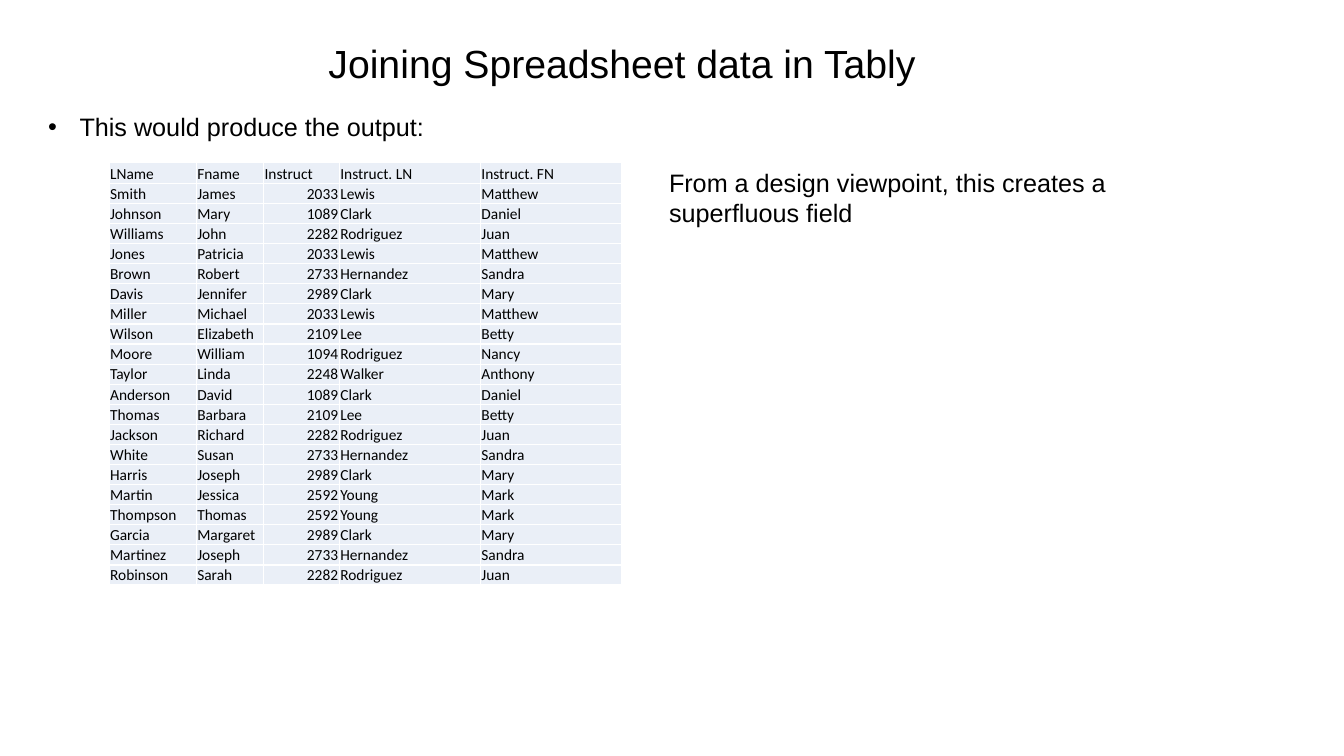
from dataclasses import dataclass

from lxml.etree import SubElement
from pptx import Presentation
from pptx.dml.color import RGBColor
from pptx.enum.text import MSO_ANCHOR, PP_ALIGN
from pptx.oxml.ns import qn
from pptx.util import Pt


@dataclass(frozen=True)
class Theme:
    ink: str = "000000"
    cell: str = "EAEFF7"
    border: str = "FFFFFF"
    text_font: str = "Arial"
    table_font: str = "Calibri"
    title_size: float = 28
    body_size: float = 18
    table_size: float = 11


class SlideBuilder:
    def __init__(self, slide, theme):
        self.s = slide
        self.theme = theme

    def style(self, p, font, size, align=PP_ALIGN.LEFT):
        p.alignment = align
        for r in p.runs:
            r.font.name = font
            r.font.size = Pt(size)
            r.font.color.rgb = RGBColor.from_string(self.theme.ink)

    def text(self, text, left, top, width, height, size, align=PP_ALIGN.LEFT):
        sp = self.s.shapes.add_textbox(Pt(left), Pt(top), Pt(width), Pt(height))
        tf = sp.text_frame
        tf.word_wrap = True
        tf.text = text
        self.style(tf.paragraphs[0], self.theme.text_font, size, align)
        return tf.paragraphs[0]

    def bullet(self, text, left, top, width, height, size, indent):
        p = self.text(text, left, top, width, height, size)
        pPr = p._p.get_or_add_pPr()
        pPr.set("marL", str(Pt(indent)))
        pPr.set("indent", str(-Pt(indent)))
        SubElement(pPr, qn("a:buFont"), typeface=self.theme.text_font)
        SubElement(pPr, qn("a:buChar"), char="•")

    def borders(self, cell):
        tcPr = cell._tc.get_or_add_tcPr()
        for i, side in enumerate(("lnL", "lnR", "lnT", "lnB")):
            ln = SubElement(tcPr, qn(f"a:{side}"), w=str(Pt(1)))
            fill = SubElement(ln, qn("a:solidFill"))
            SubElement(fill, qn("a:srgbClr"), val=self.theme.border)
            tcPr.insert(i, ln)

    def cell(self, cell, text):
        cell.fill.solid()
        cell.fill.fore_color.rgb = RGBColor.from_string(self.theme.cell)
        self.borders(cell)
        cell.margin_left = cell.margin_right = cell.margin_top = Pt(0.75)
        cell.margin_bottom = Pt(0)
        cell.vertical_anchor = MSO_ANCHOR.BOTTOM
        cell.text = text
        align = PP_ALIGN.RIGHT if text.isdigit() else PP_ALIGN.LEFT
        self.style(cell.text_frame.paragraphs[0], self.theme.table_font,
                   self.theme.table_size, align)

    def table(self, rows, left, top, widths, header_height, row_height):
        height = header_height + row_height * (len(rows) - 1)
        frame = self.s.shapes.add_table(len(rows), len(widths), Pt(left), Pt(top),
                                        Pt(sum(widths)), Pt(height))
        table = frame.table
        table.first_row = table.horz_banding = False
        for column, width in zip(table.columns, widths):
            column.width = Pt(width)
        for i, values in enumerate(rows):
            table.rows[i].height = Pt(row_height if i else header_height)
            for j, value in enumerate(values):
                self.cell(table.cell(i, j), value)


HEADER = ("LName", "Fname", "Instruct", "Instruct. LN", "Instruct. FN")

INSTRUCTORS = {
    "1089": ("Clark", "Daniel"),
    "1094": ("Rodriguez", "Nancy"),
    "2033": ("Lewis", "Matthew"),
    "2109": ("Lee", "Betty"),
    "2248": ("Walker", "Anthony"),
    "2282": ("Rodriguez", "Juan"),
    "2592": ("Young", "Mark"),
    "2733": ("Hernandez", "Sandra"),
    "2989": ("Clark", "Mary"),
}

STUDENTS = [
    ("Smith", "James", "2033"),
    ("Johnson", "Mary", "1089"),
    ("Williams", "John", "2282"),
    ("Jones", "Patricia", "2033"),
    ("Brown", "Robert", "2733"),
    ("Davis", "Jennifer", "2989"),
    ("Miller", "Michael", "2033"),
    ("Wilson", "Elizabeth", "2109"),
    ("Moore", "William", "1094"),
    ("Taylor", "Linda", "2248"),
    ("Anderson", "David", "1089"),
    ("Thomas", "Barbara", "2109"),
    ("Jackson", "Richard", "2282"),
    ("White", "Susan", "2733"),
    ("Harris", "Joseph", "2989"),
    ("Martin", "Jessica", "2592"),
    ("Thompson", "Thomas", "2592"),
    ("Garcia", "Margaret", "2989"),
    ("Martinez", "Joseph", "2733"),
    ("Robinson", "Sarah", "2282"),
]


def main():
    prs = Presentation()
    prs.slide_width, prs.slide_height = Pt(960), Pt(540)
    theme = Theme()
    b = SlideBuilder(prs.slides.add_slide(prs.slide_layouts[6]), theme)

    # Students joined to their instructors by number
    rows = [HEADER] + [student + INSTRUCTORS[student[2]] for student in STUDENTS]
    b.table(rows, 77.9, 116, (62.3, 48.1, 54.1, 100.8, 100.8), 15, 14.34)

    # Title
    b.text("Joining Spreadsheet data in Tably", 50.4, 24.5, 787.7, 41,
           theme.title_size, PP_ALIGN.CENTER)

    # Lead-in and remark
    b.bullet("This would produce the output:", 27.2, 76.3, 864.7, 29,
             theme.body_size, 22.5)
    b.text("From a design viewpoint, this creates a superfluous field",
           470.8, 116, 381.6, 51, theme.body_size)

    prs.save("out.pptx")


if __name__ == "__main__":
    main()
